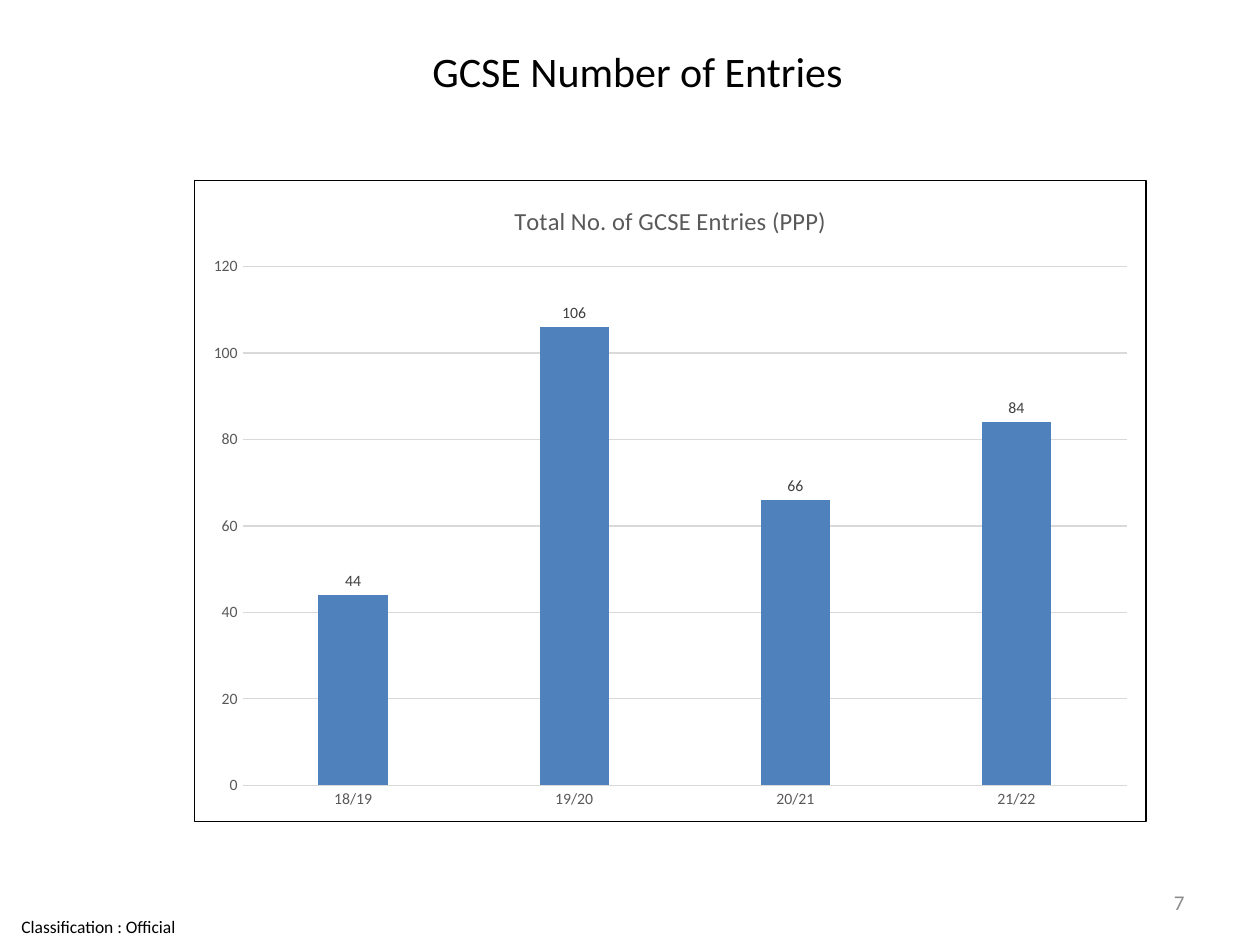
"""Build the slide with the GCSE entries column chart."""
from dataclasses import dataclass

import lxml.etree
import pptx
import pptx.chart.data
import pptx.dml.color
import pptx.enum.chart
import pptx.enum.text
import pptx.oxml
import pptx.oxml.ns
import pptx.util

WIDTH, HEIGHT = pptx.util.Inches(10), pptx.util.Inches(7.5)
FONT = "Calibri"
COLORS = {
    "text": "000000", "number": "8C8C8C", "axis": "595959",
    "label": "404040", "grid": "D9D9D9", "bar": "4F81BD",
}
ENTRIES = {"18/19": 44, "19/20": 106, "20/21": 66, "21/22": 84}
ALIGN = pptx.enum.text.PP_ALIGN
CHART = pptx.enum.chart


@dataclass(frozen=True)
class Box:
    """Hold a position and size as shares of the slide."""
    left: float
    top: float
    width: float
    height: float

    def emu(self) -> tuple[int, int, int, int]:
        """Return the box in slide units."""
        return (int(self.left * WIDTH), int(self.top * HEIGHT),
                int(self.width * WIDTH), int(self.height * HEIGHT))


@dataclass(frozen=True)
class Label:
    """Describe one line of text on the slide."""
    text: str
    box: Box
    size: float
    color: str
    align: ALIGN
    margin: float = 0.1


LABELS = [
    Label("Classification : Official", Box(0, 0.96, 0.16, 0.04), 10, "text", ALIGN.LEFT, 0.17),
    Label("GCSE Number of Entries", Box(0.076, 0.04, 0.86, 0.07), 24, "text", ALIGN.CENTER),
    Label("7", Box(0.717, 0.93, 0.233, 0.05), 12, "number", ALIGN.RIGHT),
]
CHART_BOX = Box(0.154, 0.19, 0.756, 0.68)


def set_all(target: object, values: dict[str, object]) -> None:
    """Set each named attribute of an object."""
    for name, value in values.items():
        setattr(target, name, value)


def rgb(name: str) -> pptx.dml.color.RGBColor:
    """Look up a named colour."""
    return pptx.dml.color.RGBColor.from_string(COLORS[name])


def style_font(font: object, size: float, color: str) -> None:
    """Apply the slide's typeface with a size and colour."""
    set_all(font, {"name": FONT, "size": pptx.util.Pt(size), "bold": False})
    font.color.rgb = rgb(color)


def style_line(line: object, color: str) -> None:
    """Draw a thin line in a named colour."""
    line.color.rgb = rgb(color)
    line.width = pptx.util.Pt(0.75)


def add_label(s: pptx.slide.Slide, label: Label) -> None:
    """Add one text box."""
    tf = s.shapes.add_textbox(*label.box.emu()).text_frame
    side = pptx.util.Inches(label.margin)
    set_all(tf, {
        "word_wrap": True, "vertical_anchor": pptx.enum.text.MSO_ANCHOR.MIDDLE,
        "margin_left": side, "margin_right": side, "margin_top": 0, "margin_bottom": 0,
    })
    p = tf.paragraphs[0]
    p.alignment = label.align
    r = p.add_run()
    r.text = label.text
    style_font(r.font, label.size, label.color)


def add_border(chart: pptx.chart.chart.Chart, color: str) -> None:
    """Frame the chart area with a thin line."""
    border = pptx.oxml.parse_xml(
        f'<c:spPr {pptx.oxml.ns.nsdecls("c", "a")}><a:noFill/><a:ln w="9525"><a:solidFill>'
        f'<a:srgbClr val="{COLORS[color]}"/></a:solidFill></a:ln></c:spPr>')
    chart.element.find(pptx.oxml.ns.qn("c:chart")).addnext(border)


def add_entries_chart(s: pptx.slide.Slide) -> None:
    """Add the column chart of entries by school year."""
    data = pptx.chart.data.CategoryChartData(number_format="0")
    data.categories = list(ENTRIES)
    data.add_series("Series 1", list(ENTRIES.values()))
    chart = s.shapes.add_chart(
        CHART.XL_CHART_TYPE.COLUMN_CLUSTERED, *CHART_BOX.emu(), data).chart
    style_font(chart.font, 10, "text")
    set_all(chart, {"has_legend": False, "has_title": True})
    r = chart.chart_title.text_frame.paragraphs[0].add_run()
    r.text = "Total No. of GCSE Entries (PPP)"
    style_font(r.font, 14, "axis")
    add_border(chart, "text")

    for axis in (chart.category_axis, chart.value_axis):
        axis.major_tick_mark = CHART.XL_TICK_MARK.NONE
        style_font(axis.tick_labels.font, 9, "axis")
    style_line(chart.category_axis.format.line, "grid")
    values = chart.value_axis
    set_all(values, {"minimum_scale": 0, "maximum_scale": 120, "major_unit": 20})
    style_line(values.major_gridlines.format.line, "grid")
    values.format.line.fill.background()

    plot = chart.plots[0]
    set_all(plot, {"gap_width": 219, "overlap": -27, "vary_by_categories": False,
                   "has_data_labels": True})
    set_all(plot.data_labels, {
        "show_value": True, "position": CHART.XL_LABEL_POSITION.OUTSIDE_END,
        "number_format": "0", "number_format_is_linked": False,
    })
    style_font(plot.data_labels.font, 9, "label")
    fill = plot.series[0].format.fill
    fill.solid()
    fill.fore_color.rgb = rgb("bar")


def main() -> None:
    """Create and save the presentation."""
    prs = pptx.Presentation()
    set_all(prs, {"slide_width": WIDTH, "slide_height": HEIGHT})
    s = prs.slides.add_slide(prs.slide_layouts[6])
    for label in LABELS:
        add_label(s, label)
    add_entries_chart(s)
    prs.save("out.pptx")


if __name__ == "__main__":
    main()
